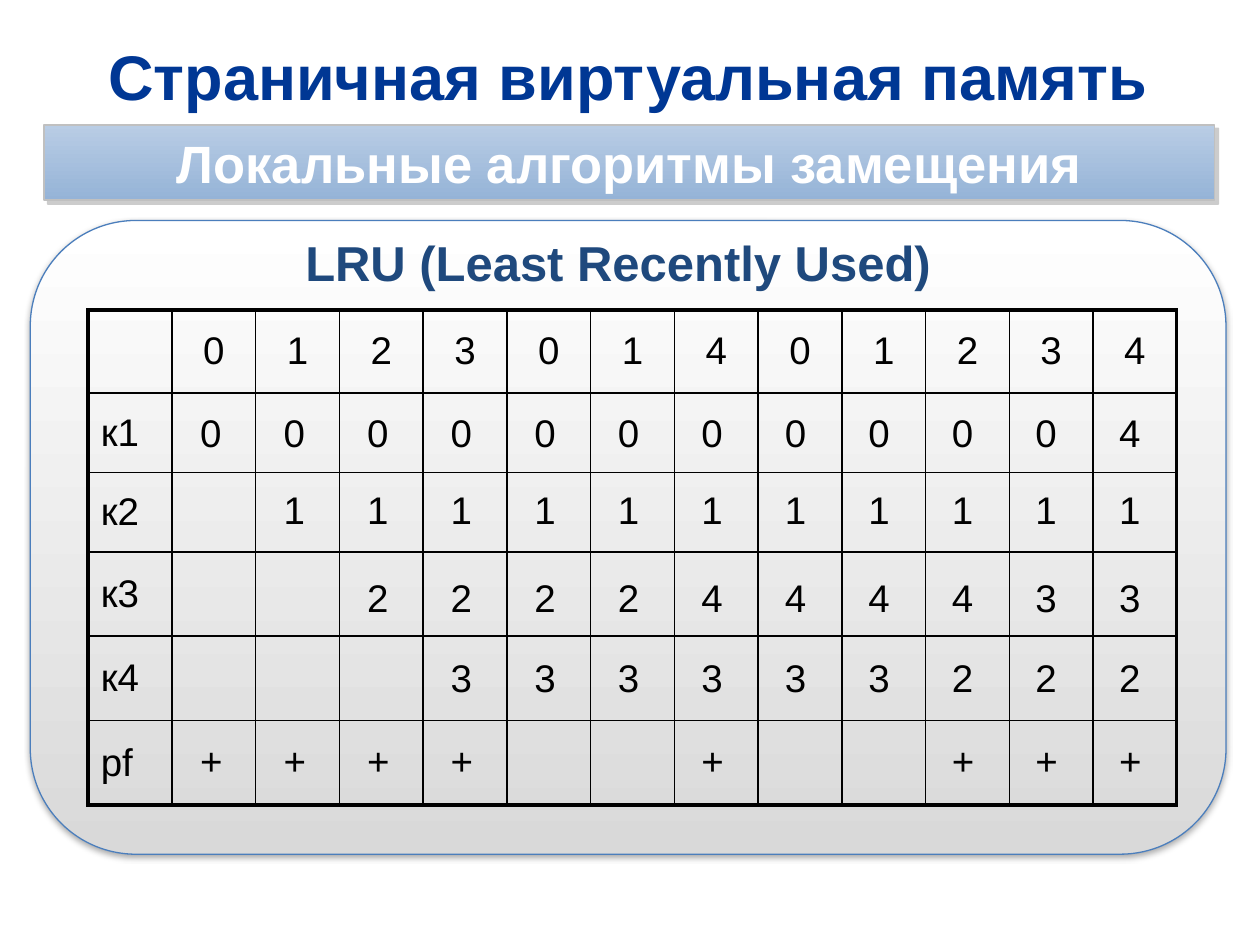
import dataclasses

import lxml.etree
import pptx
import pptx.dml.color
import pptx.enum.shapes
import pptx.enum.text
import pptx.oxml.ns
import pptx.util

ALIGN = pptx.enum.text.PP_ALIGN
ANCHOR = pptx.enum.text.MSO_ANCHOR
SHAPES = pptx.enum.shapes.MSO_SHAPE
UNIT = pptx.util.Inches(0.1)

REFERENCES = "012301401234"
ROW_NAMES = ["", "к1", "к2", "к3", "к4", "pf"]
ROW_HEIGHTS = [6.6, 6.3, 6.3, 6.7, 6.7, 6.7]
FRAME_STATES = {
    32: "000000000004",
    38.1: " 11111111111",
    45.1: "  2222444433",
    51.4: "   333333222",
    58: "++++  +  +++",
}


@dataclasses.dataclass(frozen=True)
class Theme:
    """Colours, typeface and sizes of the slide."""

    font: str = "Arial"
    title: str = "003794"
    heading: str = "1F497D"
    ink: str = "000000"
    light: str = "FFFFFF"
    banner: tuple = ("B9CDE5", "95B3D7")
    banner_line: str = "C0C0C0"
    panel: tuple = ("FFFFFF", "D9D9D9")
    panel_line: str = "4B7EBC"
    title_size: int = 36
    banner_size: int = 30
    heading_size: int = 28
    body_size: int = 22
    thin: float = 1
    thick: float = 2.25


THEME = Theme()


def rgb(value):
    """Turn a hex string into a colour."""
    return pptx.dml.color.RGBColor.from_string(value)


def place(left, top, width, height):
    """Convert units of a 100 by 75 slide grid to lengths."""
    return [round(UNIT * share) for share in (left, top, width, height)]


def child(parent, tag, **attributes):
    """Append a DrawingML element with the given attributes."""
    element = lxml.etree.SubElement(parent, pptx.oxml.ns.qn(tag))
    for name, value in attributes.items():
        element.set(name, str(value))
    return element


def write(frame, text, size=THEME.body_size, color=THEME.ink, bold=False,
          align=ALIGN.LEFT, anchor=ANCHOR.TOP, after=0, grow=False):
    """Fill a text frame with one formatted paragraph."""
    frame.word_wrap = True
    frame.vertical_anchor = anchor
    if grow:
        frame.auto_size = pptx.enum.text.MSO_AUTO_SIZE.SHAPE_TO_FIT_TEXT
    paragraph = frame.paragraphs[0]
    paragraph.alignment = align
    paragraph.space_after = pptx.util.Pt(after)
    run = paragraph.add_run()
    run.text = text
    run.font.name = THEME.font
    run.font.size = pptx.util.Pt(size)
    run.font.bold = bold
    run.font.color.rgb = rgb(color)


def add_label(slide, area, text, **style):
    """Add a text box and return its text frame."""
    frame = slide.shapes.add_textbox(*place(*area)).text_frame
    write(frame, text, **style)
    return frame


def add_plate(slide, kind, area, colors, line, line_width, shadow):
    """Add a shape with a downward gradient and an outer shadow."""
    plate = slide.shapes.add_shape(kind, *place(*area))
    plate.fill.gradient()
    plate.fill.gradient_angle = 270
    for stop, color in zip(plate.fill.gradient_stops, colors):
        stop.color.rgb = rgb(color)
    plate.line.color.rgb = rgb(line)
    plate.line.width = pptx.util.Pt(line_width)
    plate.shadow.inherit = False
    color, alpha, blur, distance, angle = shadow
    effects = plate.element.spPr.find(pptx.oxml.ns.qn("a:effectLst"))
    outer = child(effects, "a:outerShdw", blurRad=pptx.util.Pt(blur),
                  dist=pptx.util.Pt(distance), dir=angle * 60000,
                  rotWithShape=0)
    child(child(outer, "a:srgbClr", val=color), "a:alpha", val=alpha * 1000)
    return plate


def set_borders(cell, widths):
    """Draw the left, right, top and bottom borders of a cell."""
    properties = cell._tc.get_or_add_tcPr()
    for side, width in zip("LRTB", widths):
        border = child(properties, f"a:ln{side}", w=pptx.util.Pt(width))
        child(child(border, "a:solidFill"), "a:srgbClr", val=THEME.ink)
    cell.fill.background()


def add_grid(slide):
    """Add the reference string table with a thick outer frame."""
    rows, columns = len(ROW_NAMES), len(REFERENCES) + 1
    grid = slide.shapes.add_table(
        rows, columns, *place(7, 24.6, 86.4, sum(ROW_HEIGHTS))).table
    grid.first_row = grid.horz_banding = False
    for row, height in zip(grid.rows, ROW_HEIGHTS):
        row.height = round(UNIT * height)
    for r in range(rows):
        for c in range(columns):
            outer = (c == 0, c == columns - 1, r == 0, r == rows - 1)
            cell = grid.cell(r, c)
            set_borders(cell, [THEME.thick if edge else THEME.thin
                               for edge in outer])
            cell.vertical_anchor = ANCHOR.MIDDLE
            text = ROW_NAMES[r] if c == 0 else REFERENCES[c - 1]
            if text and (r == 0 or c == 0):
                write(cell.text_frame, text, anchor=ANCHOR.MIDDLE,
                      align=ALIGN.LEFT if c == 0 else ALIGN.CENTER)


def add_states(slide):
    """Place the page held by each frame after each reference."""
    for top, states in FRAME_STATES.items():
        for step, state in enumerate(states):
            if state != " ":
                add_label(slide, (14.9 + 6.63 * step, top, 4, 4.7), state,
                          grow=True)


def main():
    """Build the slide and save it."""
    deck = pptx.Presentation()
    deck.slide_width, deck.slide_height = UNIT * 100, UNIT * 75
    slide = deck.slides.add_slide(deck.slide_layouts[6])

    add_plate(slide, SHAPES.ROUNDED_RECTANGLE, (2.4, 17.5, 94.9, 50.3),
              THEME.panel, THEME.panel_line, 0.75, ("000000", 35, 3.1, 1.8, 90))
    add_label(slide, (2.4, 2.6, 94.9, 6.8), "Страничная виртуальная память",
              size=THEME.title_size, color=THEME.title, bold=True,
              align=ALIGN.CENTER, anchor=ANCHOR.MIDDLE)
    banner = add_plate(slide, SHAPES.RECTANGLE, (3.5, 9.9, 92.9, 6),
                       THEME.banner, THEME.banner_line, 1,
                       ("808080", 40, 0, 3, 45)).text_frame
    banner.margin_left = banner.margin_right = round(UNIT * 2.4)
    banner.margin_top = banner.margin_bottom = round(UNIT * 0.4)
    write(banner, "Локальные алгоритмы замещения", size=THEME.banner_size,
          color=THEME.light, bold=True, align=ALIGN.CENTER,
          anchor=ANCHOR.MIDDLE)
    heading = add_label(slide, (5.9, 18, 88.5, 5.7),
                        "LRU (Least Recently Used)", size=THEME.heading_size,
                        color=THEME.heading, bold=True, align=ALIGN.CENTER,
                        after=6, grow=True)
    heading.margin_right = round(UNIT * 3.2)
    add_grid(slide)
    add_states(slide)
    deck.save("out.pptx")


if __name__ == "__main__":
    main()
